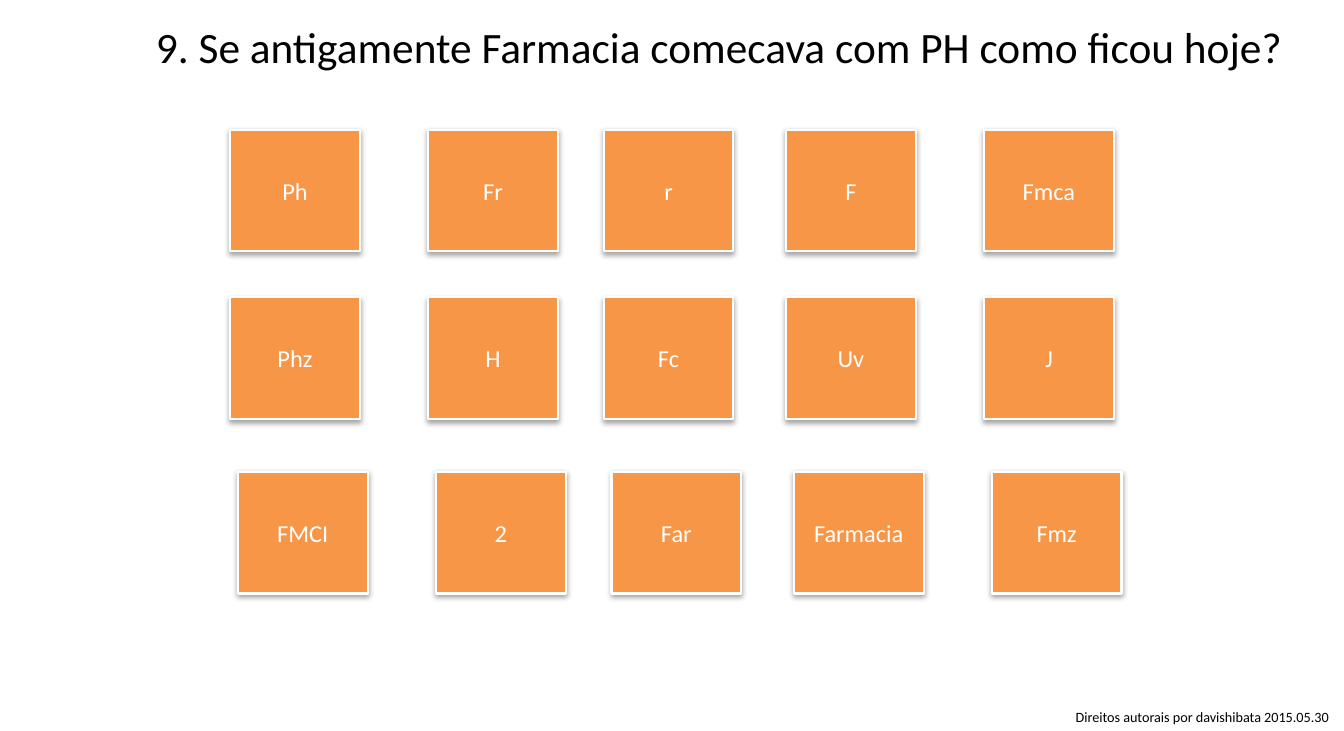
from dataclasses import dataclass

from lxml.etree import SubElement
from pptx import Presentation
from pptx.dml.color import RGBColor
from pptx.enum.shapes import MSO_SHAPE
from pptx.enum.text import MSO_ANCHOR, PP_ALIGN
from pptx.oxml.ns import qn
from pptx.util import Inches, Pt


@dataclass(frozen=True)
class Theme:
    """Colours, font and type sizes of the quiz."""
    font: str = "Calibri"
    ink: str = "000000"
    paper: str = "FFFFFF"
    tile: str = "F79646"
    title: float = 32
    label: float = 18
    credit: float = 10.5
    edge: float = 1.57


THEME = Theme()
TITLE = "9. Se antigamente Farmacia comecava com PH como ficou hoje?"
CREDIT = "Direitos autorais por davishibata 2015.05.30"
COLS = (0, 2.03, 3.83, 5.7, 7.73)
ROWS = (
    (0, 0, ("Ph", "Fr", "r", "F", "Fmca")),
    (0, 1.72, ("Phz", "H", "Fc", "Uv", "J")),
    (0.08, 3.51, ("FMCI", "2", "Far", "Farmacia", "Fmz")),
)


def write(frame, text, size, color):
    """Put one styled paragraph in a text frame and return it."""
    line = frame.paragraphs[0]
    line.text = text
    line.font.name = THEME.font
    line.font.size = Pt(size)
    line.font.color.rgb = RGBColor.from_string(color)
    return line


def add_text(slide, box, text, size, wrap):
    """Add a plain text box."""
    frame = slide.shapes.add_textbox(*map(Inches, box)).text_frame
    frame.word_wrap = wrap
    write(frame, text, size, THEME.ink)


def add_shade(shape):
    """Give a shape a soft shadow below it."""
    shape.shadow.inherit = False
    effects = shape._element.spPr.find(qn("a:effectLst"))
    shade = SubElement(effects, qn("a:outerShdw"), blurRad=str(Pt(4)),
                       dist=str(Pt(2)), dir="5400000", rotWithShape="0")
    color = SubElement(shade, qn("a:srgbClr"), val=THEME.ink)
    SubElement(color, qn("a:alpha"), val="35000")


def add_tile(slide, box, text):
    """Add one answer tile."""
    tile = slide.shapes.add_shape(MSO_SHAPE.RECTANGLE, *map(Inches, box))
    tile.fill.solid()
    tile.fill.fore_color.rgb = RGBColor.from_string(THEME.tile)
    tile.line.color.rgb = RGBColor.from_string(THEME.paper)
    tile.line.width = Pt(THEME.edge)
    add_shade(tile)
    frame = tile.text_frame
    frame.word_wrap = True
    frame.vertical_anchor = MSO_ANCHOR.MIDDLE
    write(frame, text, THEME.label, THEME.paper).alignment = PP_ALIGN.CENTER


def add_grid(slide, left, top, width, height):
    """Lay out the answer tiles from the top left corner of the grid."""
    for shift, drop, labels in ROWS:
        for col, text in zip(COLS, labels):
            box = (left + shift + col, top + drop, width, height)
            add_tile(slide, box, text)


def main():
    """Build and save the quiz slide."""
    deck = Presentation()
    deck.slide_width, deck.slide_height = Inches(13.78), Inches(7.5)
    slide = deck.slides.add_slide(deck.slide_layouts[6])
    add_text(slide, (10.93, 7.22, 2.85, 0.28), CREDIT, THEME.credit, False)
    add_text(slide, (1.5, 0.16, 11.99, 2.12), TITLE, THEME.title, True)
    add_grid(slide, 2.36, 1.33, 1.33, 1.25)
    deck.save("out.pptx")


if __name__ == "__main__":
    main()
